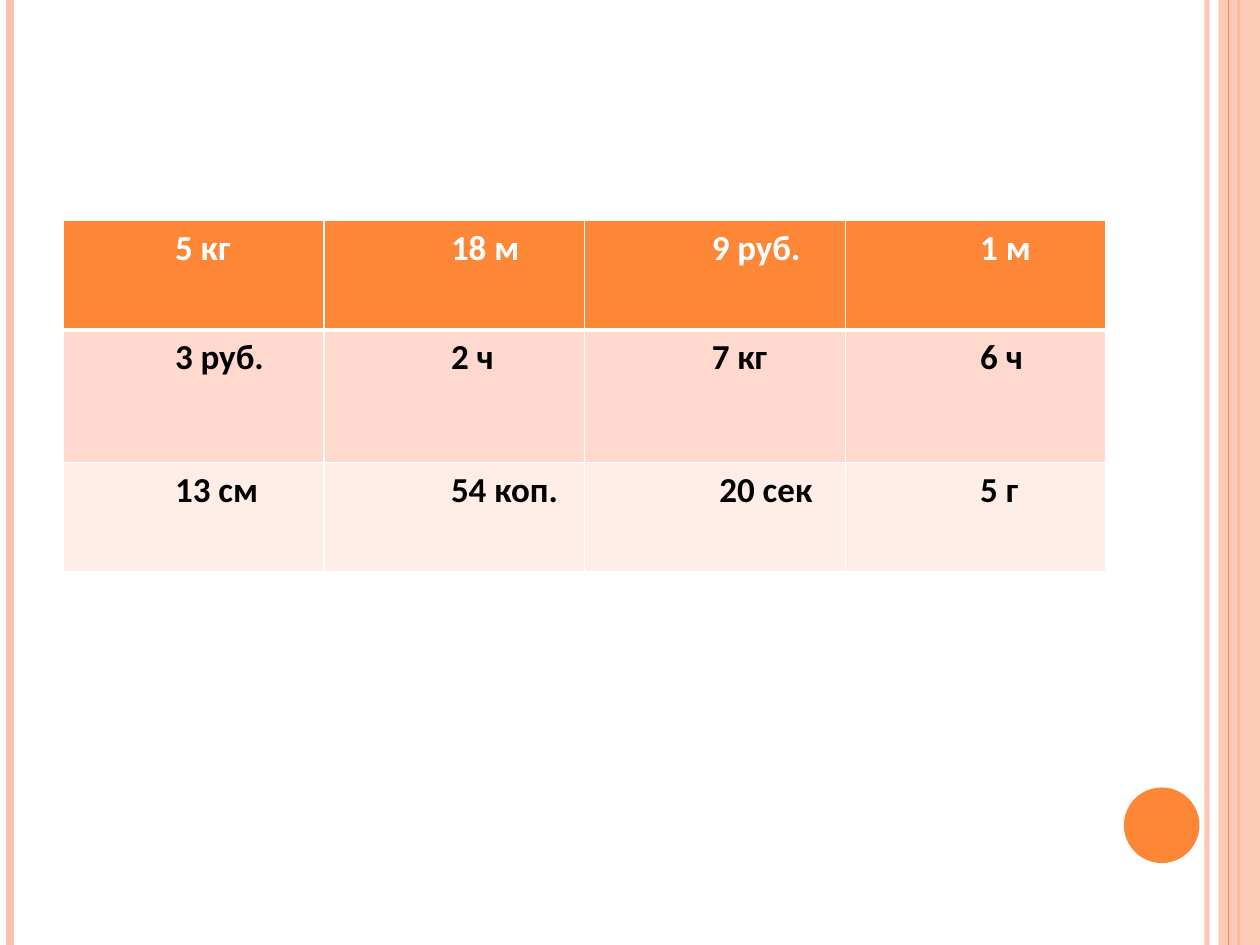
from dataclasses import dataclass

from lxml import etree
from pptx import Presentation
from pptx.dml.color import RGBColor
from pptx.enum.shapes import MSO_CONNECTOR, MSO_SHAPE
from pptx.oxml.ns import qn
from pptx.util import Inches, Pt

LINE = MSO_CONNECTOR.STRAIGHT
RECT = MSO_SHAPE.RECTANGLE
OVAL = MSO_SHAPE.OVAL


@dataclass(frozen=True)
class Theme:
    main: str = "FE8637"
    soft: str = "FEC3AE"
    white: str = "FFFFFF"
    black: str = "000000"
    odd: str = "FFD9CE"
    even: str = "FFEDE8"
    font: str = "Calibri"
    size: int = 20


THEME = Theme()
ROWS = [
    ["5 кг", "18 м", "9 руб.", "1 м"],
    ["3 руб.", "2 ч", "7 кг", "6 ч"],
    ["13 см", "54 коп.", "20 сек", "5 г"],
]
HEIGHTS = [0.87, 1.05, 0.87]
FILLS = [THEME.main, THEME.odd, THEME.even]
INKS = [THEME.white, THEME.black, THEME.black]
INDENTS = [0.82, 0.94, 0.94, 1.0]
SHIFTS = {(2, 2): 0.06}


def rgb(code):
    return RGBColor.from_string(code)


def fade(part, alpha):
    color = next(part.iter(qn("a:srgbClr")))
    etree.SubElement(color, qn("a:alpha"), val=str(alpha * 1000))


def add_rule(slide, x, top, height, color, width, alpha=100):
    rule = slide.shapes.add_connector(
        LINE, Inches(x), Inches(top), Inches(x), Inches(top + height))
    rule.line.color.rgb = rgb(color)
    rule.line.width = Pt(width)
    props = rule._element.spPr
    etree.SubElement(props, qn("a:effectLst"))
    if alpha < 100:
        fade(props, alpha)


def add_solid(slide, kind, box, color, alpha=100):
    shape = slide.shapes.add_shape(kind, *map(Inches, box))
    shape.shadow.inherit = False
    shape.fill.solid()
    shape.fill.fore_color.rgb = rgb(color)
    shape.line.fill.background()
    if alpha < 100:
        fade(shape._element.spPr, alpha)


def add_frame(slide, box):
    left, top, width, height = box
    right = left + width
    add_rule(slide, right - 0.42, top, height, THEME.soft, 3, 93)
    add_rule(slide, left + 0.08, top, height, THEME.soft, 4.5)
    add_rule(slide, right - 0.17, top, height, THEME.main, 1.5)
    add_solid(slide, RECT, (right - 0.33, top, 0.33, height), THEME.soft, 87)
    add_rule(slide, right - 0.25, top, height, THEME.main, 0.75)
    add_solid(slide, OVAL, (right - 1.08, top + 6.25, 0.6, 0.6), THEME.main)


def set_edges(cell, widths):
    props = cell._tc.get_or_add_tcPr()
    for spot, (side, width) in enumerate(widths.items()):
        edge = etree.Element(qn(f"a:ln{side}"), w=str(Pt(width)))
        fill = etree.SubElement(edge, qn("a:solidFill"))
        etree.SubElement(fill, qn("a:srgbClr"), val=THEME.white)
        props.insert(spot, edge)


def fill_cell(cell, text, row, col):
    cell.fill.solid()
    cell.fill.fore_color.rgb = rgb(FILLS[row])
    margins = {"margin_left": 0.07, "margin_right": 0.07,
               "margin_top": 0, "margin_bottom": 0}
    for name, value in margins.items():
        setattr(cell, name, Inches(value))
    set_edges(cell, {"L": 1, "R": 1, "T": 3 if row == 1 else 1,
                     "B": 3 if row == 0 else 1})
    para = cell.text_frame.paragraphs[0]
    para.line_spacing = 1.15
    indent = INDENTS[col] + SHIFTS.get((row, col), 0)
    para._p.get_or_add_pPr().set("marL", str(Inches(indent)))
    run = para.add_run()
    run.text = text
    style = {"name": THEME.font, "size": Pt(THEME.size), "bold": True}
    for name, value in style.items():
        setattr(run.font, name, value)
    run.font.color.rgb = rgb(INKS[row])


def add_grid(slide, box):
    table = slide.shapes.add_table(
        len(ROWS), len(ROWS[0]), *map(Inches, box)).table
    for col in table.columns:
        col.width = Inches(box[2] / len(ROWS[0]))
    for r, (texts, height) in enumerate(zip(ROWS, HEIGHTS)):
        table.rows[r].height = Inches(height)
        for c, text in enumerate(texts):
            fill_cell(table.cell(r, c), text, r, c)


def main():
    deck = Presentation()
    deck.slide_width, deck.slide_height = Inches(10), Inches(7.5)
    slide = deck.slides.add_slide(deck.slide_layouts[6])
    add_frame(slide, (0, 0, 10, 7.5))
    add_grid(slide, (0.5, 1.75, 8.28, sum(HEIGHTS)))
    deck.save("out.pptx")


if __name__ == "__main__":
    main()
